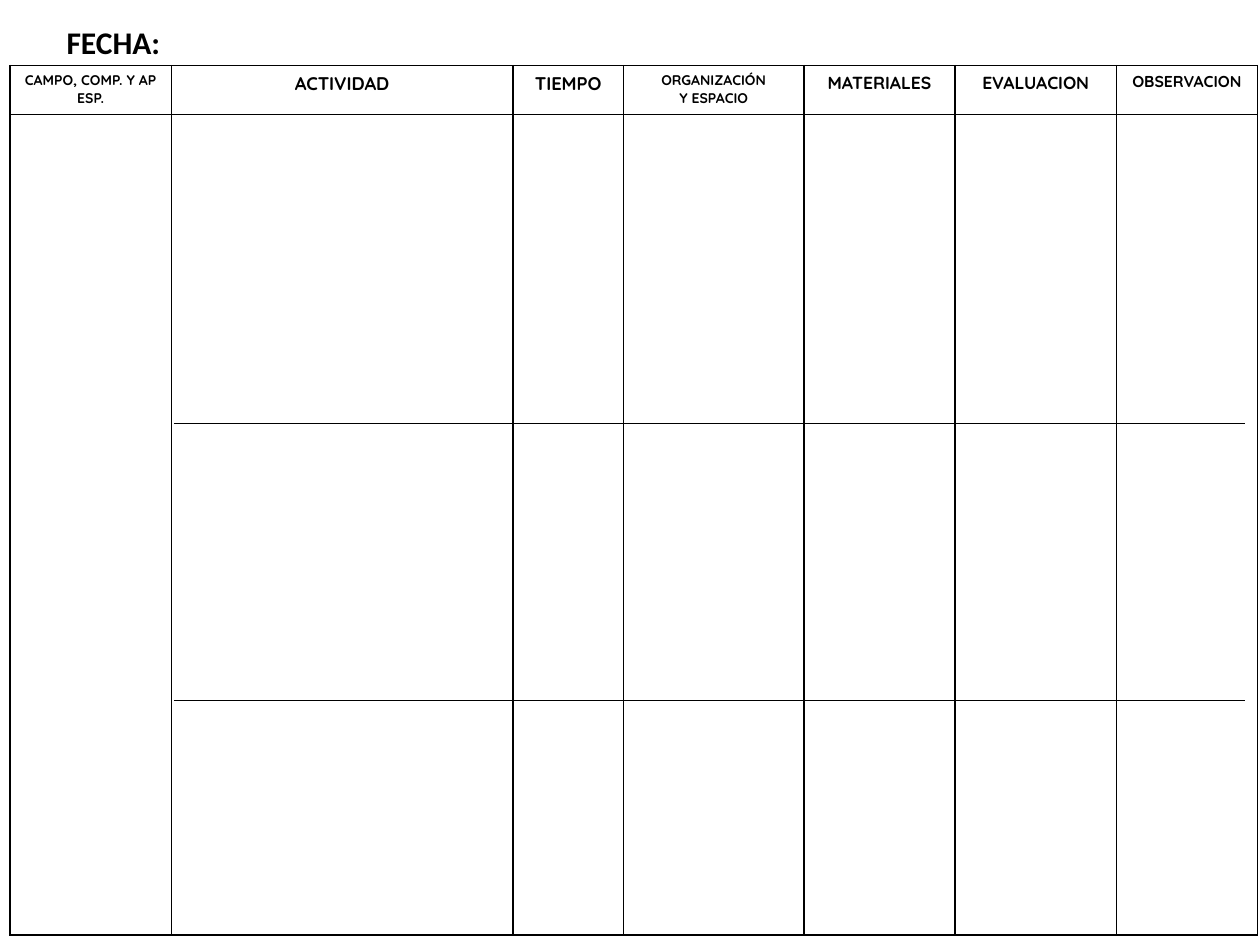
"""Build a blank daily planning sheet with a date line and a seven-column table."""
from lxml.etree import SubElement
from pptx import Presentation
from pptx.dml.color import RGBColor
from pptx.enum.shapes import MSO_CONNECTOR
from pptx.enum.text import MSO_AUTO_SIZE, PP_ALIGN
from pptx.oxml import parse_xml
from pptx.oxml.ns import nsdecls, qn
from pptx.util import Inches, Pt

BLACK = RGBColor(0x00, 0x00, 0x00)
HEADING_FONT = "Quicksand"
DATE_FONT = "Calibri"

COLUMNS = [
    ("CAMPO, COMP. Y AP ESP.", 8, 1.28),
    ("ACTIVIDAD", 10.5, 2.71),
    ("TIEMPO", 10.5, 0.88),
    ("ORGANIZACIÓN\nY ESPACIO", 8, 1.43),
    ("MATERIALES", 10, 1.2),
    ("EVALUACION", 10, 1.28),
    ("OBSERVACION", 9, 1.12),
]
ROW_HEIGHTS = [0.39, 6.51]
DIVIDER_HEIGHTS = [3.36, 5.56]


class PlanningSheet:
    def __init__(self, slide, color):
        self.slide = slide
        self.color = color

    def format_text(self, text_frame, font_name, size, alignment):
        for paragraph in text_frame.paragraphs:
            paragraph.alignment = alignment
            for run in paragraph.runs:
                run.font.name = font_name
                run.font.size = Pt(size)
                run.font.bold = True
                run.font.color.rgb = self.color

    def add_label(self, text, left, top, width, height, size):
        shape = self.slide.shapes.add_textbox(
            Inches(left), Inches(top), Inches(width), Inches(height))
        text_frame = shape.text_frame
        text_frame.text = text
        text_frame.word_wrap = False
        text_frame.auto_size = MSO_AUTO_SIZE.SHAPE_TO_FIT_TEXT
        self.format_text(text_frame, DATE_FONT, size, PP_ALIGN.LEFT)

    def add_borders(self, cell, width):
        properties = cell._tc.get_or_add_tcPr()
        for index, side in enumerate(("lnL", "lnR", "lnT", "lnB")):
            border = parse_xml(
                f'<a:{side} {nsdecls("a")} w="{Pt(width)}"><a:solidFill>'
                f'<a:srgbClr val="{self.color}"/></a:solidFill></a:{side}>')
            properties.insert(index, border)

    def add_table(self, columns, row_heights, left, top):
        total_width = sum(width for _, _, width in columns)
        table = self.slide.shapes.add_table(
            len(row_heights), len(columns), Inches(left), Inches(top),
            Inches(total_width), Inches(sum(row_heights))).table
        table.horz_banding = False
        for row, height in zip(table.rows, row_heights):
            row.height = Inches(height)
        for index, (heading, size, width) in enumerate(columns):
            table.columns[index].width = Inches(width)
            text_frame = table.cell(0, index).text_frame
            text_frame.text = heading
            self.format_text(text_frame, HEADING_FONT, size, PP_ALIGN.CENTER)
        for cell in table.iter_cells():
            cell.fill.background()
            self.add_borders(cell, 1)

    def add_divider(self, start, end, height):
        connector = self.slide.shapes.add_connector(
            MSO_CONNECTOR.STRAIGHT, Inches(start), Inches(height),
            Inches(end), Inches(height))
        connector.line.color.rgb = self.color
        connector.line.width = Pt(0.75)
        SubElement(connector._element.spPr, qn("a:effectLst"))


def main():
    presentation = Presentation()
    presentation.slide_width = Inches(10)
    presentation.slide_height = Inches(7.5)
    slide = presentation.slides.add_slide(presentation.slide_layouts[6])
    sheet = PlanningSheet(slide, BLACK)
    sheet.add_table(COLUMNS, ROW_HEIGHTS, 0.08, 0.52)
    for height in DIVIDER_HEIGHTS:
        sheet.add_divider(1.38, 9.88, height)
    sheet.add_label("FECHA:", 0.43, 0.13, 3.84, 0.4, 18)
    presentation.save("out.pptx")


if __name__ == "__main__":
    main()
